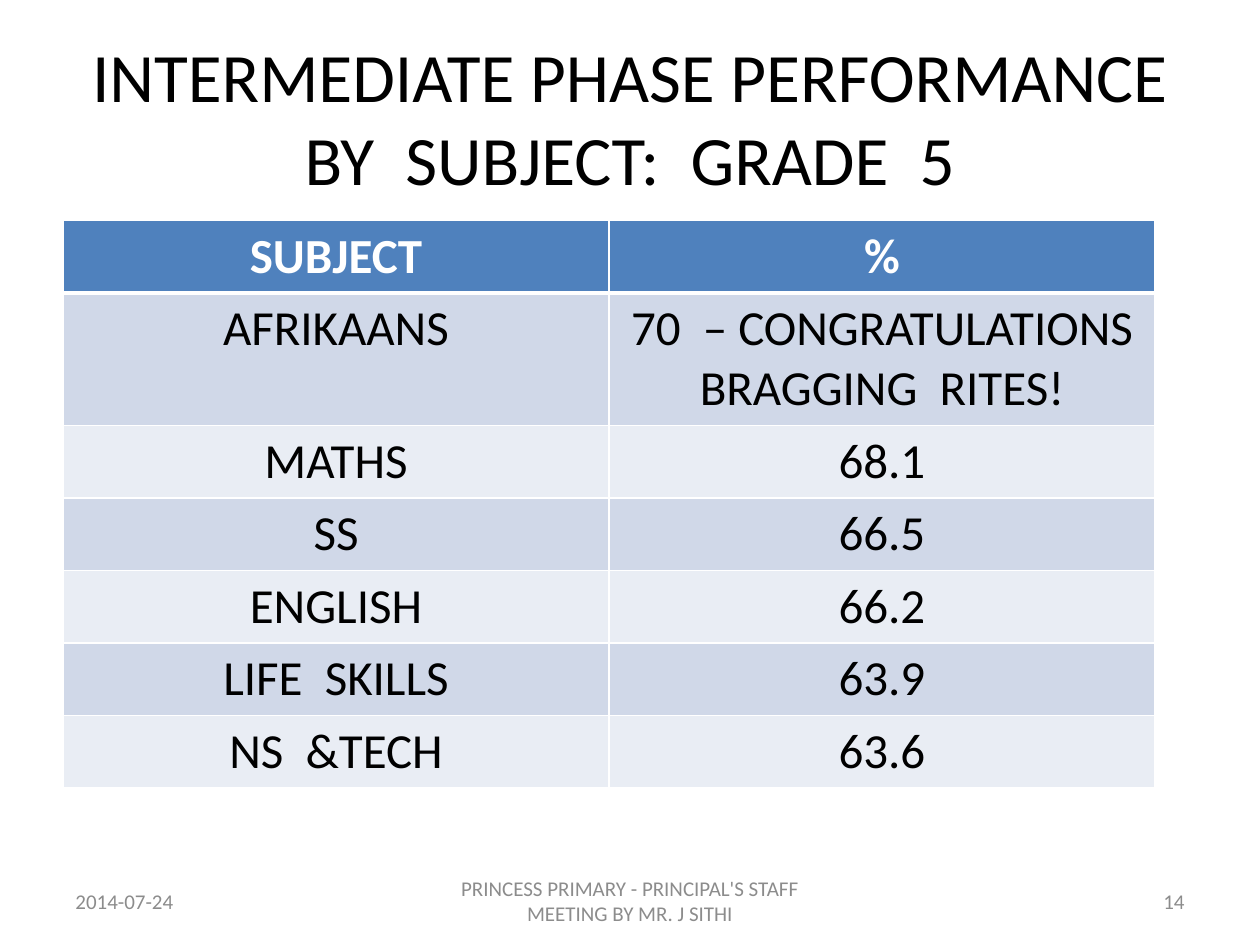
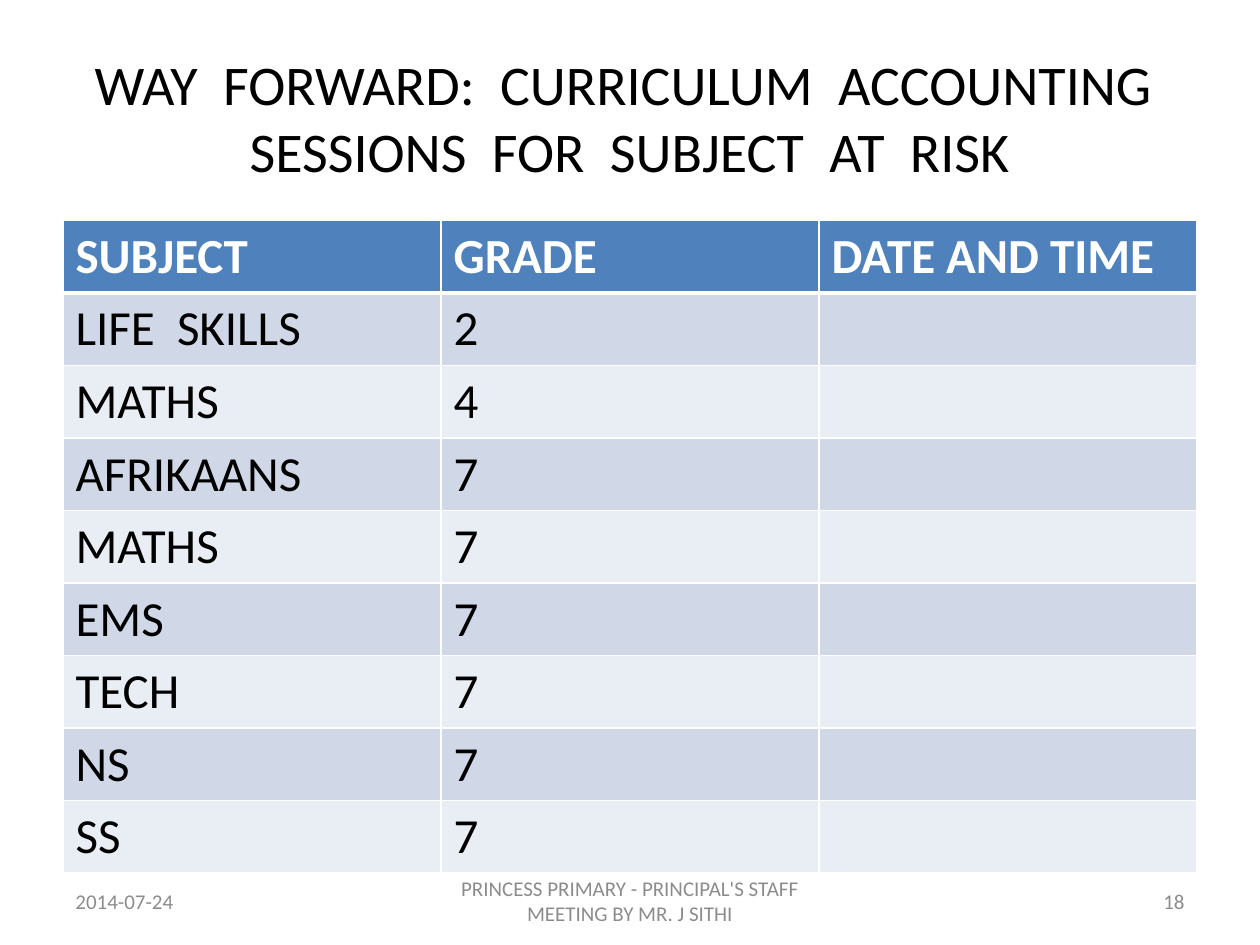
from dataclasses import dataclass

from lxml import etree
from pptx import Presentation
from pptx.dml.color import RGBColor
from pptx.enum.text import MSO_ANCHOR, MSO_AUTO_SIZE, PP_ALIGN
from pptx.oxml.ns import qn
from pptx.util import Inches, Pt

LEFT, CENTER, RIGHT = PP_ALIGN.LEFT, PP_ALIGN.CENTER, PP_ALIGN.RIGHT
MIDDLE = MSO_ANCHOR.MIDDLE
NO_AUTOFIT = MSO_AUTO_SIZE.NONE

BLACK = RGBColor(0x00, 0x00, 0x00)
WHITE = RGBColor(0xFF, 0xFF, 0xFF)
GREY = RGBColor(0x8C, 0x8C, 0x8C)
HEADER_BLUE = RGBColor(0x4F, 0x81, 0xBD)
BANDS = (RGBColor(0xD0, 0xD8, 0xE8), RGBColor(0xE9, 0xED, 0xF4))

FONT = "Calibri"
TABLE_SIZE = 28
FOOTER_SIZE = 12
THIN, THICK = 1, 3

SLIDE_WIDTH, SLIDE_HEIGHT = Inches(10), Inches(7.5)
GRID_COLUMNS, GRID_ROWS = 120, 90
TITLE_ONLY_LAYOUT = 5
LINE_ROWS, SECOND_LINE_ROWS = 6.8, 5.6

DATE = "2014-07-24"
FOOTER = "PRINCESS PRIMARY - PRINCIPAL'S STAFF MEETING BY MR. J SITHI"


@dataclass(frozen=True)
class Box:
    column: float
    row: float
    columns: float
    rows: float

    def place(self) -> tuple[int, int, int, int]:
        return (across(self.column), down(self.row),
                across(self.columns), down(self.rows))


@dataclass(frozen=True)
class TableSlide:
    title: str
    title_size: float
    number: int
    table_columns: float
    align: PP_ALIGN
    rows: tuple[tuple[str, ...], ...]


TITLE_BOX = Box(6, 3.6, 108, 15)
TABLE_COLUMN, TABLE_ROW = 6, 21
DATE_BOX = Box(6, 83.4, 28, 4.8)
FOOTER_BOX = Box(41, 83.4, 38, 4.8)
NUMBER_BOX = Box(86, 83.4, 28, 4.8)

SLIDES = (
    TableSlide(
        "INTERMEDIATE PHASE PERFORMANCE BY  SUBJECT:  GRADE  5",
        39.6, 14, 104, CENTER,
        (
            ("SUBJECT", "%"),
            ("AFRIKAANS", "70  – CONGRATULATIONS\nBRAGGING  RITES!"),
            ("MATHS", "68.1"),
            ("SS", "66.5"),
            ("ENGLISH", "66.2"),
            ("LIFE  SKILLS", "63.9"),
            ("NS  &TECH", "63.6"),
        ),
    ),
    TableSlide(
        "WAY  FORWARD:  CURRICULUM  ACCOUNTING  SESSIONS  FOR  SUBJECT  AT  RISK",
        32, 18, 108, LEFT,
        (
            ("SUBJECT", "GRADE", "DATE AND TIME"),
            ("LIFE  SKILLS", "2", ""),
            ("MATHS", "4", ""),
            ("AFRIKAANS", "7", ""),
            ("MATHS", "7", ""),
            ("EMS", "7", ""),
            ("TECH", "7", ""),
            ("NS", "7", ""),
            ("SS", "7", ""),
        ),
    ),
)


def across(columns: float) -> int:
    return round(SLIDE_WIDTH * columns / GRID_COLUMNS)


def down(rows: float) -> int:
    return round(SLIDE_HEIGHT * rows / GRID_ROWS)


def write(frame, text: str, *, size: float, color: RGBColor,
          align: PP_ALIGN = LEFT, bold: bool = False) -> None:
    for index, line in enumerate(text.split("\n")):
        paragraph = frame.add_paragraph() if index else frame.paragraphs[0]
        paragraph.alignment = align
        if line:
            run = paragraph.add_run()
            run.text = line
            run.font.name = FONT
            run.font.size = Pt(size)
            run.font.bold = bold
            run.font.color.rgb = color


def add_title(slide, text: str, size: float) -> None:
    title = slide.shapes.title
    title.left, title.top, title.width, title.height = TITLE_BOX.place()
    frame = title.text_frame
    frame.word_wrap = True
    frame.auto_size = NO_AUTOFIT
    frame.vertical_anchor = MIDDLE
    write(frame, text, size=size, color=BLACK, align=CENTER)


def add_footer(slide, box: Box, text: str, align: PP_ALIGN) -> None:
    frame = slide.shapes.add_textbox(*box.place()).text_frame
    frame.word_wrap = True
    frame.vertical_anchor = MIDDLE
    write(frame, text, size=FOOTER_SIZE, color=GREY, align=align)


def set_borders(cell, top: float, bottom: float) -> None:
    properties = cell._tc.get_or_add_tcPr()
    widths = {"a:lnL": THIN, "a:lnR": THIN, "a:lnT": top, "a:lnB": bottom}
    for tag, width in widths.items():
        line = etree.SubElement(properties, qn(tag), w=str(Pt(width)))
        fill = etree.SubElement(line, qn("a:solidFill"))
        etree.SubElement(fill, qn("a:srgbClr"), val=str(WHITE))


def row_height(texts: tuple[str, ...]) -> float:
    return LINE_ROWS + SECOND_LINE_ROWS * max(text.count("\n") for text in texts)


def add_subject_table(slide, content: TableSlide) -> None:
    heights = [row_height(texts) for texts in content.rows]
    column_count = len(content.rows[0])
    box = Box(TABLE_COLUMN, TABLE_ROW, content.table_columns, sum(heights))
    table = slide.shapes.add_table(len(heights), column_count, *box.place()).table
    for column in table.columns:
        column.width = across(content.table_columns / column_count)
    for row_index, texts in enumerate(content.rows):
        table.rows[row_index].height = down(heights[row_index])
        header = row_index == 0
        for column_index, text in enumerate(texts):
            cell = table.cell(row_index, column_index)
            set_borders(cell, top=THICK if row_index == 1 else THIN,
                        bottom=THICK if header else THIN)
            cell.fill.solid()
            cell.fill.fore_color.rgb = (
                HEADER_BLUE if header else BANDS[(row_index - 1) % len(BANDS)])
            write(cell.text_frame, text, size=TABLE_SIZE,
                  color=WHITE if header else BLACK,
                  align=content.align, bold=header)


def add_table_slide(presentation, content: TableSlide) -> None:
    slide = presentation.slides.add_slide(
        presentation.slide_layouts[TITLE_ONLY_LAYOUT])
    add_title(slide, content.title, content.title_size)
    add_subject_table(slide, content)
    add_footer(slide, DATE_BOX, DATE, LEFT)
    add_footer(slide, FOOTER_BOX, FOOTER, CENTER)
    add_footer(slide, NUMBER_BOX, str(content.number), RIGHT)


def main() -> None:
    presentation = Presentation()
    presentation.slide_width = SLIDE_WIDTH
    presentation.slide_height = SLIDE_HEIGHT
    for content in SLIDES:
        add_table_slide(presentation, content)
    presentation.save("out.pptx")


if __name__ == "__main__":
    main()
